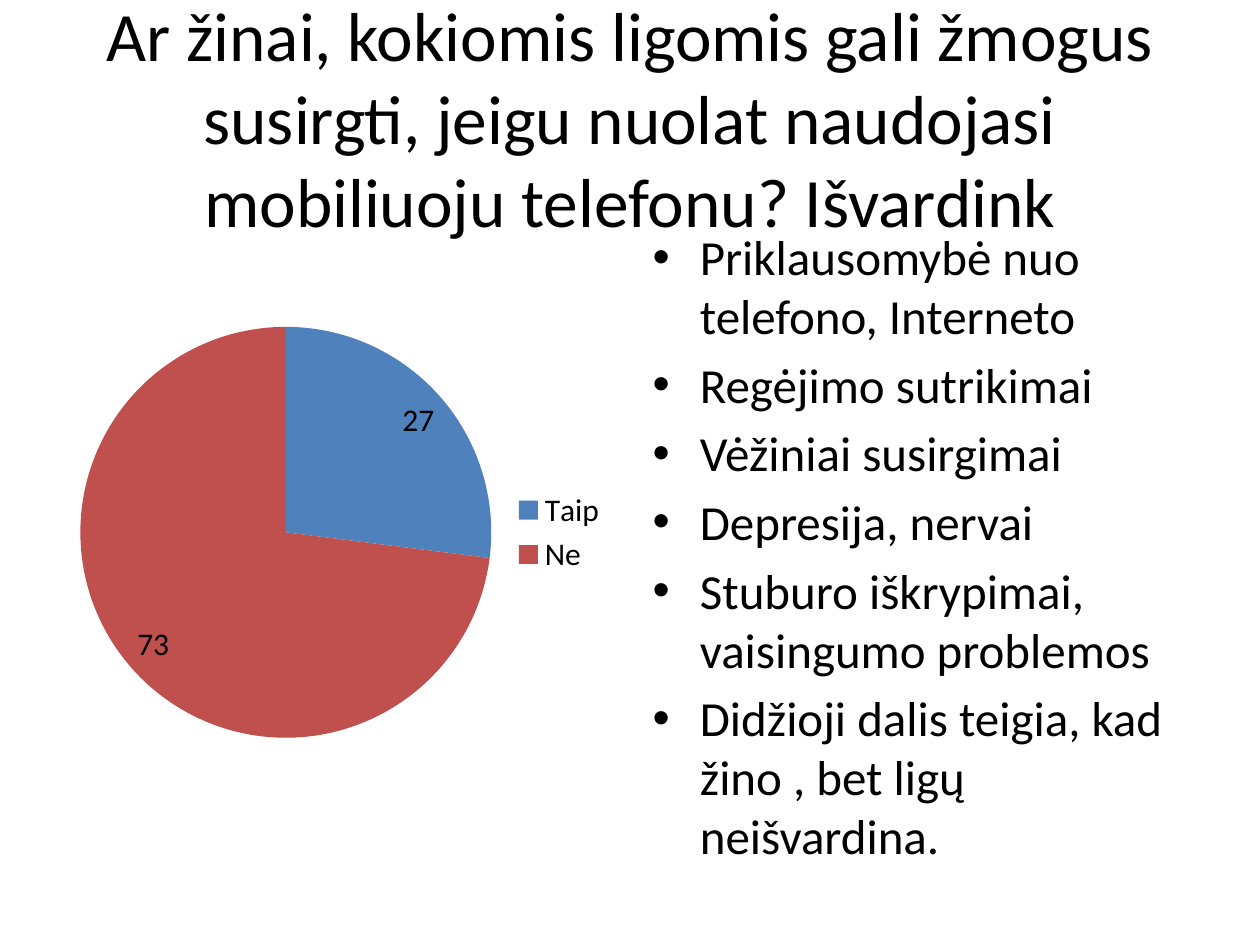
import pptx
import pptx.chart.data
import pptx.dml.color
import pptx.enum.chart
import pptx.enum.text
import pptx.util
from pptx.util import Inches

FONT = "Calibri"
TITLE = ("Ar žinai, kokiomis ligomis gali žmogus susirgti, jeigu nuolat "
         "naudojasi mobiliuoju telefonu? Išvardink")
ANSWERS = {"Taip": (27, "4F81BD"), "Ne": (73, "C0504D")}
ILLNESSES = [
    "Priklausomybė nuo telefono, Interneto",
    "Regėjimo sutrikimai",
    "Vėžiniai susirgimai",
    "Depresija, nervai",
    "Stuburo iškrypimai, vaisingumo problemos",
    "Didžioji dalis teigia, kad žino , bet ligų neišvardina.",
]


def rgb(value):
    """Return the colour for a hex string."""
    return pptx.dml.color.RGBColor.from_string(value)


def style_font(font, size):
    """Apply the slide's typeface and text colour at a size in points."""
    font.name = FONT
    font.size = pptx.util.Pt(size)
    font.color.rgb = rgb("000000")


def fill_placeholder(sp, box, lines, size, anchor):
    """Place a placeholder in its box and write one paragraph per line."""
    sp.left, sp.top, sp.width, sp.height = box
    tf = sp.text_frame
    tf.text = "\n".join(lines)
    tf.word_wrap = True
    tf.auto_size = pptx.enum.text.MSO_AUTO_SIZE.NONE
    tf.vertical_anchor = anchor
    for p in tf.paragraphs:
        for r in p.runs:
            style_font(r.font, size)


def add_answer_pie(slide, box):
    """Draw the pie chart of answers in its box."""
    data = pptx.chart.data.CategoryChartData()
    data.categories = list(ANSWERS)
    data.add_series("Series 1", [value for value, _ in ANSWERS.values()])
    chart = slide.shapes.add_chart(
        pptx.enum.chart.XL_CHART_TYPE.PIE, *box, data).chart
    style_font(chart.font, 18)
    chart.has_title = False
    chart.has_legend = True
    chart.legend.position = pptx.enum.chart.XL_LEGEND_POSITION.RIGHT
    chart.legend.include_in_layout = False
    plot = chart.plots[0]
    plot.vary_by_categories = True
    plot.has_data_labels = True
    plot.data_labels.show_value = True
    plot.data_labels.position = pptx.enum.chart.XL_LABEL_POSITION.INSIDE_END
    for i, (_, color) in enumerate(ANSWERS.values()):
        fill = plot.series[0].points[i].format.fill
        fill.solid()
        fill.fore_color.rgb = rgb(color)


def build_survey_slide(prs):
    """Add the slide with a question, its answers and the illnesses named."""
    slide = prs.slides.add_slide(prs.slide_layouts.get_by_name("Two Content"))
    margin, top, width, height = (
        Inches(0.5), Inches(1.75), Inches(4.42), Inches(4.95))
    right = prs.slide_width - margin - width
    title, left_body, right_body = list(slide.placeholders)[:3]
    left_body.element.getparent().remove(left_body.element)
    anchors = pptx.enum.text.MSO_ANCHOR
    title_box = (margin, Inches(0.3), prs.slide_width - 2 * margin, Inches(1.25))
    fill_placeholder(title, title_box, [TITLE], 39.6, anchors.MIDDLE)
    add_answer_pie(slide, (margin, top, width, height))
    fill_placeholder(right_body, (right, top, width, height), ILLNESSES, 28,
                     anchors.TOP)


def main():
    """Build and save the presentation."""
    prs = pptx.Presentation()
    prs.slide_width, prs.slide_height = Inches(10), Inches(7.5)
    build_survey_slide(prs)
    prs.save("out.pptx")


if __name__ == "__main__":
    main()
